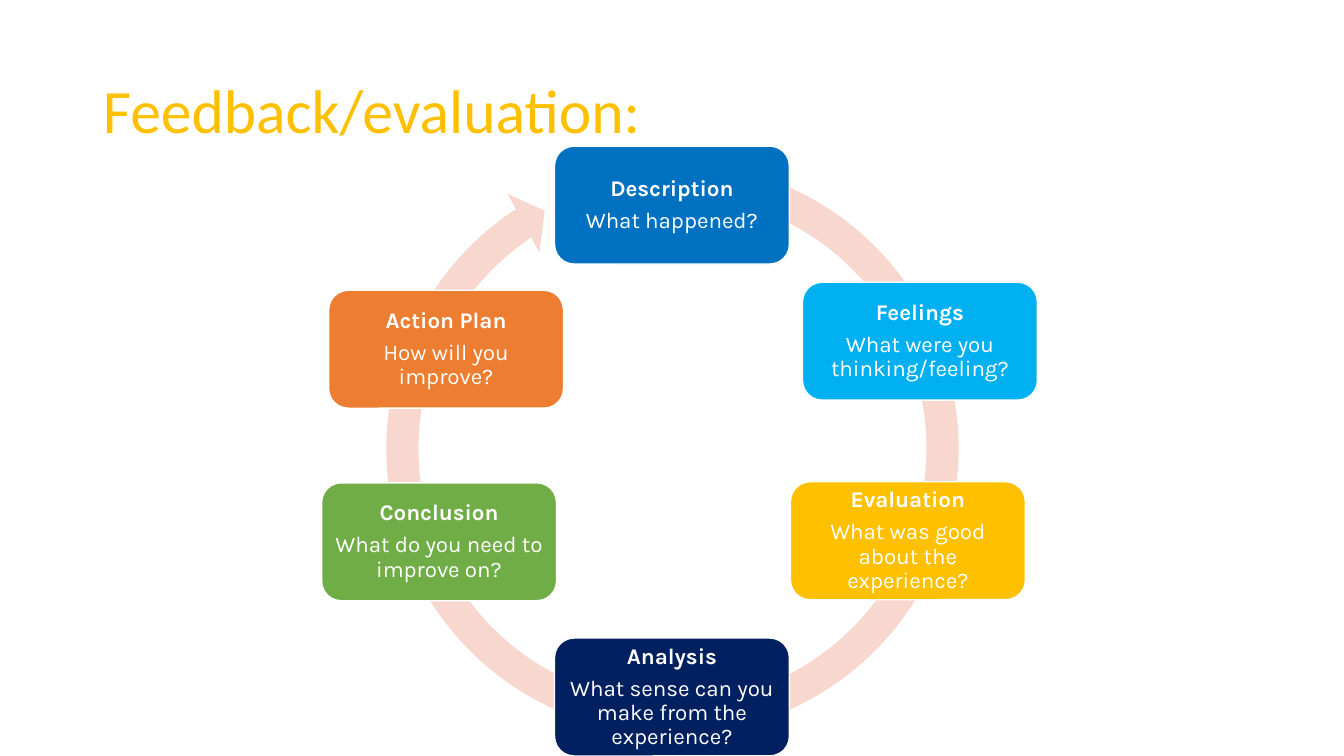
from pptx import Presentation
from pptx.dml.color import RGBColor
from pptx.enum.shapes import MSO_SHAPE as Shape
from pptx.enum.text import MSO_ANCHOR as Anchor, PP_ALIGN as Align
from pptx.util import Inches, Pt

WHITE = RGBColor(0xFF, 0xFF, 0xFF)
AMBER = RGBColor(0xFF, 0xC0, 0x00)
BLUE = RGBColor(0x00, 0x70, 0xC0)
SKY = RGBColor(0x00, 0xB0, 0xF0)
NAVY = RGBColor(0x00, 0x20, 0x60)
GREEN = RGBColor(0x70, 0xAD, 0x47)
ORANGE = RGBColor(0xED, 0x7D, 0x31)
PINK = RGBColor(0xF8, 0xD7, 0xCE)

STAGE_WIDTH, STAGE_HEIGHT = 2.33, 1.17
RING_ADJUSTMENTS = (0.053, 3.126, 141.92, 171.482, 0.055)

# left, top, colour, heading, question
STAGES = [
    (5.5, 1.45, BLUE, "Description", "What happened?"),
    (7.96, 2.8, SKY, "Feelings", "What were you thinking/feeling?"),
    (7.84, 4.78, AMBER, "Evaluation", "What was good about the experience?"),
    (5.5, 6.33, NAVY, "Analysis", "What sense can you make from the experience?"),
    (3.19, 4.79, GREEN, "Conclusion", "What do you need to improve on?"),
    (3.26, 2.88, ORANGE, "Action Plan", "How will you improve?"),
]


def apply_format(target, values):
    for name, value in values.items():
        setattr(target, name, value)


def write_paragraph(paragraph, text, color, layout, font):
    paragraph.text = text
    apply_format(paragraph, {"line_spacing": 0.9, **layout})
    apply_format(paragraph.runs[0].font, font)
    paragraph.runs[0].font.color.rgb = color


def add_title(slide, text):
    title = slide.shapes.title
    apply_format(title, {"left": Inches(0.92), "top": Inches(0.4),
                         "width": Inches(11.5), "height": Inches(1.45)})
    title.text_frame.vertical_anchor = Anchor.MIDDLE
    write_paragraph(title.text_frame.paragraphs[0], text, AMBER,
                    {"alignment": Align.LEFT},
                    {"name": "Calibri", "size": Pt(44)})


def add_filled_shape(cycle, kind, left, top, width, height, color):
    shape = cycle.shapes.add_shape(kind, Inches(left), Inches(top),
                                   Inches(width), Inches(height))
    shape.shadow.inherit = False
    shape.fill.solid()
    shape.fill.fore_color.rgb = color
    return shape


def add_ring_arrow(cycle):
    ring = add_filled_shape(cycle, Shape.CIRCULAR_ARROW, 3.66, 1.44, 6.02, 6.02, PINK)
    ring.line.fill.background()
    for index, value in enumerate(RING_ADJUSTMENTS):
        ring.adjustments[index] = value


def add_stage(cycle, left, top, color, heading, question):
    stage = add_filled_shape(cycle, Shape.ROUNDED_RECTANGLE, left, top,
                             STAGE_WIDTH, STAGE_HEIGHT, color)
    stage.line.color.rgb = WHITE
    stage.line.width = Pt(1)
    frame = stage.text_frame
    inset = Inches(0.07)
    apply_format(frame, {"word_wrap": True, "vertical_anchor": Anchor.MIDDLE,
                         "margin_left": inset, "margin_right": inset,
                         "margin_top": inset, "margin_bottom": inset})
    layout = {"alignment": Align.CENTER, "space_after": Pt(5.6)}
    font = {"name": "Karla", "size": Pt(16)}
    write_paragraph(frame.paragraphs[0], heading, WHITE, layout, {**font, "bold": True})
    write_paragraph(frame.add_paragraph(), question, WHITE, layout, {**font, "bold": False})


def main():
    deck = Presentation()
    deck.slide_width, deck.slide_height = Inches(13.33), Inches(7.5)
    slide = deck.slides.add_slide(deck.slide_layouts.get_by_name("Title Only"))
    add_title(slide, "Feedback/evaluation:")
    cycle = slide.shapes.add_group_shape()
    add_ring_arrow(cycle)
    for stage in STAGES:
        add_stage(cycle, *stage)
    deck.save("out.pptx")


if __name__ == "__main__":
    main()
